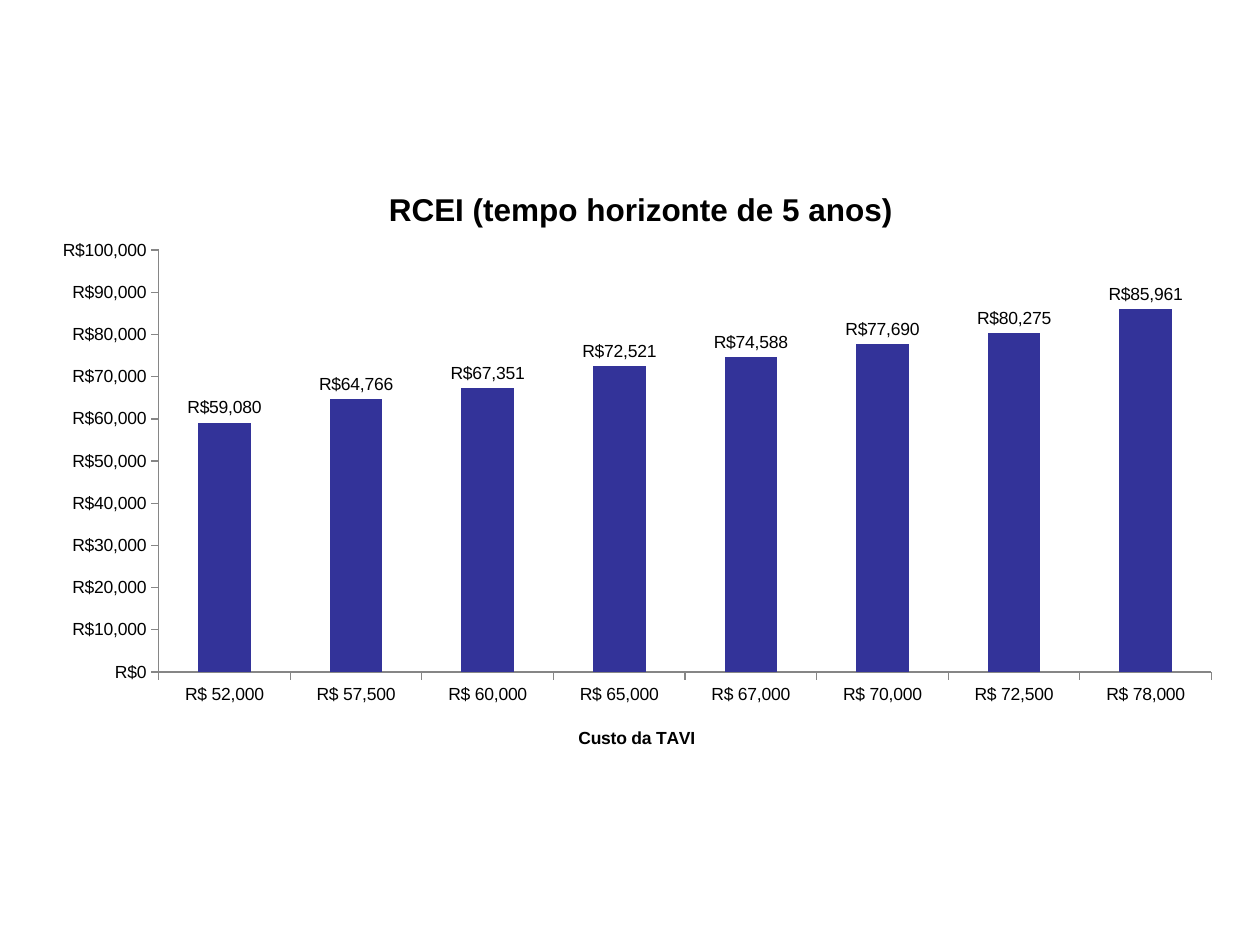
from lxml import etree
from pptx import Presentation
from pptx import util as u
from pptx.chart.data import CategoryChartData
from pptx.dml.color import RGBColor
from pptx.enum import chart as ch
from pptx.oxml.ns import qn

# Content
TITLE = "RCEI (tempo horizonte de 5 anos)"
COST = "Custo da TAVI"
COSTS = [52000, 57500, 60000, 65000, 67000, 70000, 72500, 78000]
RATIOS = [59080, 64766, 67351, 72521, 74588, 77690, 80275, 85961]
MONEY = '"R$"#,##0'
COLORS = {"bar": "333399", "text": "000000", "axis": "868686"}
FONT = "Arial"


def rgb(name):
    return RGBColor.from_string(COLORS[name])


def style(font, size=10, bold=False):
    font.name, font.size, font.bold = FONT, u.Pt(size), bold
    font.color.rgb = rgb("text")


def label(title, words, size):
    frame = title.text_frame
    frame.text = words
    style(frame.paragraphs[0].runs[0].font, size, True)


def place(part, index, **marks):
    """Set a manual layout, given as fractions of the chart."""
    for old in part.findall(qn("c:layout")):
        part.remove(old)
    layout = etree.Element(qn("c:layout"))
    manual = etree.SubElement(layout, qn("c:manualLayout"))
    for tag, value in marks.items():
        etree.SubElement(manual, qn("c:" + tag)).set("val", str(value))
    part.insert(index, layout)


deck = Presentation()
deck.slide_width, deck.slide_height = u.Pt(720), u.Pt(540)
slide = deck.slides.add_slide(deck.slide_layouts[6])

# Chart
data = CategoryChartData(number_format=MONEY)
data.categories = [f"R$ {cost:,}" for cost in COSTS]
data.add_series(TITLE, RATIOS)
chart = slide.shapes.add_chart(
    ch.XL_CHART_TYPE.COLUMN_CLUSTERED,
    u.Pt(20), u.Pt(88.5), u.Pt(686), u.Pt(351.5), data).chart
style(chart.font)
chart.has_legend = False
chart.has_title = True
label(chart.chart_title, TITLE, 18)

# Axes
costs, ratios = chart.category_axis, chart.value_axis
for axis in (costs, ratios):
    axis.has_major_gridlines = False
    axis.major_tick_mark = ch.XL_TICK_MARK.OUTSIDE
    axis.minor_tick_mark = ch.XL_TICK_MARK.NONE
    axis.format.line.color.rgb = rgb("axis")
    axis.format.line.width = u.Pt(0.75)
    style(axis.tick_labels.font)
costs.has_title = True
label(costs.axis_title, COST, 10)
ratios.minimum_scale, ratios.maximum_scale = 0, 100000
ratios.major_unit = 10000
ratios.tick_labels.number_format = MONEY
ratios.tick_labels.number_format_is_linked = False

# Bars and their values
plot = chart.plots[0]
plot.gap_width = 150
plot.vary_by_categories = False
fill = plot.series[0].format.fill
fill.solid()
fill.fore_color.rgb = rgb("bar")
plot.has_data_labels = True
values = plot.data_labels
values.show_value = True
values.number_format = MONEY
values.number_format_is_linked = False
values.position = ch.XL_LABEL_POSITION.OUTSIDE_END
style(values.font)

# Layout inside the chart
area = chart.element.find(".//" + qn("c:plotArea"))
place(area, 0, layoutTarget="inner", xMode="edge", yMode="edge",
      x=0.103, y=0.155, w=0.877, h=0.686)
place(chart.chart_title.element, 1, xMode="edge", yMode="edge",
      x=0.29, y=0.046)
place(costs.axis_title.element, 1, xMode="edge", yMode="edge",
      x=0.45, y=0.924)

deck.save("out.pptx")
